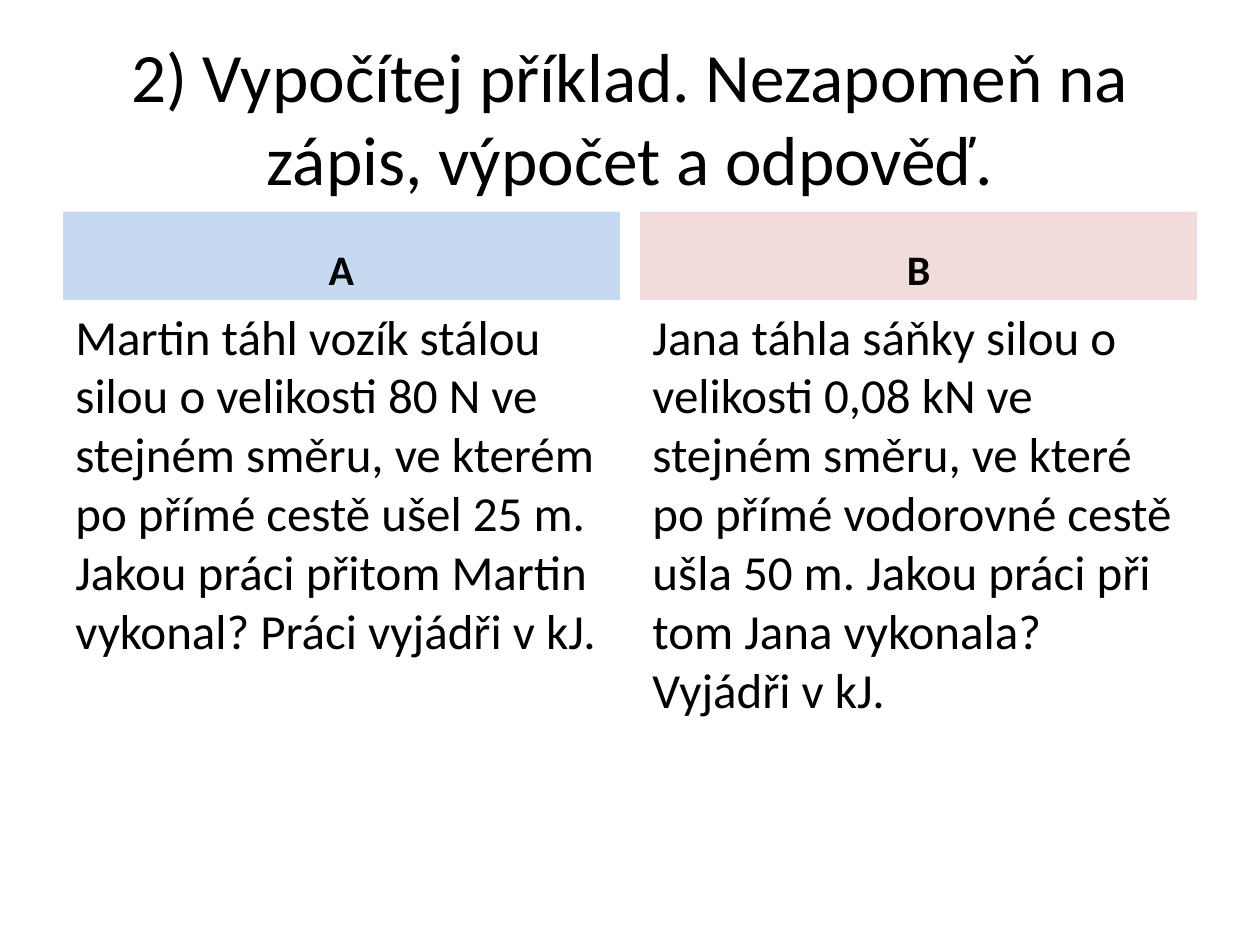
from pptx import Presentation
from pptx.dml.color import RGBColor
from pptx.enum.shapes import MSO_SHAPE
from pptx.enum.text import MSO_ANCHOR, PP_ALIGN
from pptx.util import Inches, Pt

COLORS = {"text": "000000", "A": "C6D9F1", "B": "F2DCDB"}
WIDTH, HEIGHT = 10, 7.5
EDGE, GAP = 0.5, 0.16
COL = (WIDTH - 2 * EDGE - GAP) / 2
HEAD_TOP, HEAD_H = 1.68, 0.7
BODY_TOP, BODY_H = HEAD_TOP + HEAD_H, 4.32

TITLE = {"size": Pt(39.6), "bold": False}
HEAD = {"size": Pt(24), "bold": True}
BODY = {"size": Pt(28), "bold": False}

TASKS = {
    "A": "Martin táhl vozík stálou silou o velikosti 80 N ve stejném směru, "
         "ve kterém po přímé cestě ušel 25 m. Jakou práci přitom Martin "
         "vykonal? Práci vyjádři v kJ.",
    "B": "Jana táhla sáňky silou o velikosti 0,08 kN ve stejném směru, "
         "ve které po přímé vodorovné cestě ušla 50 m. Jakou práci při tom "
         "Jana vykonala? Vyjádři v kJ.",
}


def write(shape, text, style, align, anchor):
    frame = shape.text_frame
    frame.word_wrap = True
    frame.vertical_anchor = anchor
    para = frame.paragraphs[0]
    para.alignment = align
    run = para.add_run()
    run.text = text
    for name, value in {"name": "Calibri", **style}.items():
        setattr(run.font, name, value)
    run.font.color.rgb = RGBColor.from_string(COLORS["text"])


def add_text(slide, box, text, style, align, anchor):
    shape = slide.shapes.add_textbox(*map(Inches, box))
    write(shape, text, style, align, anchor)


def add_head(slide, box, label):
    shape = slide.shapes.add_shape(MSO_SHAPE.RECTANGLE, *map(Inches, box))
    shape.shadow.inherit = False
    shape.fill.solid()
    shape.fill.fore_color.rgb = RGBColor.from_string(COLORS[label])
    shape.line.fill.background()
    write(shape, label, HEAD, PP_ALIGN.CENTER, MSO_ANCHOR.BOTTOM)


def main():
    deck = Presentation()
    deck.slide_width, deck.slide_height = Inches(WIDTH), Inches(HEIGHT)
    slide = deck.slides.add_slide(deck.slide_layouts[6])
    add_text(slide, (EDGE, 0.3, WIDTH - 2 * EDGE, 1.25),
             "2) Vypočítej příklad. Nezapomeň na zápis, výpočet a odpověď.",
             TITLE, PP_ALIGN.CENTER, MSO_ANCHOR.MIDDLE)
    for index, (label, task) in enumerate(TASKS.items()):
        left = EDGE + index * (COL + GAP)
        add_text(slide, (left, BODY_TOP, COL, BODY_H), task,
                 BODY, PP_ALIGN.LEFT, MSO_ANCHOR.TOP)
        add_head(slide, (left, HEAD_TOP, COL, HEAD_H), label)
    deck.save("out.pptx")


if __name__ == "__main__":
    main()
